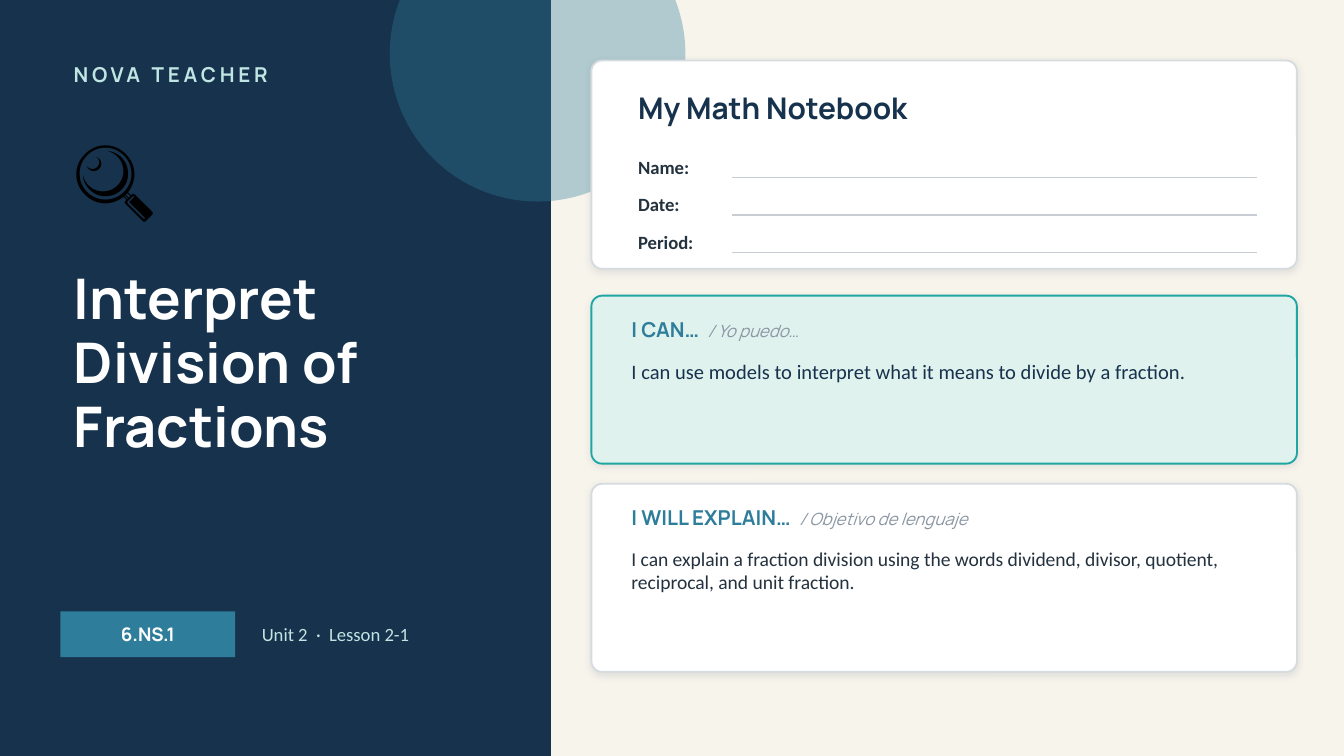
from dataclasses import dataclass

from lxml import etree
from pptx import Presentation
from pptx.dml.color import RGBColor
from pptx.enum.shapes import MSO_CONNECTOR, MSO_SHAPE
from pptx.enum.text import MSO_ANCHOR, MSO_AUTO_SIZE, PP_ALIGN
from pptx.oxml.ns import qn
from pptx.util import Inches, Pt

RECT, OVAL, ROUNDED = MSO_SHAPE.RECTANGLE, MSO_SHAPE.OVAL, MSO_SHAPE.ROUNDED_RECTANGLE
STRAIGHT = MSO_CONNECTOR.STRAIGHT
TOP, MIDDLE = MSO_ANCHOR.TOP, MSO_ANCHOR.MIDDLE
LEFT, CENTER = PP_ALIGN.LEFT, PP_ALIGN.CENTER
NO_FIT = MSO_AUTO_SIZE.NONE


@dataclass(frozen=True)
class Theme:
    cream: str = "F7F4EC"
    navy: str = "17324D"
    blue: str = "2E7D9A"
    teal: str = "1FA6A2"
    mint: str = "DFF2EE"
    pale: str = "BFE6E2"
    white: str = "FFFFFF"
    black: str = "000000"
    ink: str = "24323F"
    grey: str = "8A96A3"
    border: str = "D6DBDF"
    rule: str = "C7CDD2"
    shadow: str = "1C2E42"
    heading: str = "Manrope"
    body: str = "Calibri"
    icon: float = 44
    title: float = 30
    card_title: float = 16
    label: float = 11
    explain: float = 10.5
    small: float = 10
    hint: float = 9


THEME = Theme()
PAGE_WIDTH = 10
PAGE_HEIGHT = PAGE_WIDTH * 9 / 16
CARD_LEFT, CARD_WIDTH = 4.4, 5.25
CARD_RADIUS = 0.08


def style(name, size, color, **extra):
    return {"name": name, "size": Pt(size), "color": color, **extra}


def write(shape, spans, anchor=MIDDLE, align=LEFT, spacing=None):
    frame = shape.text_frame
    settings = {"word_wrap": True, "auto_size": NO_FIT, "vertical_anchor": anchor}
    for key, value in settings.items():
        setattr(frame, key, value)
    para = frame.paragraphs[0]
    para.alignment = align
    if spacing:
        para.line_spacing = spacing
    for text, values in spans:
        span = para.add_run()
        span.text = text
        for key, value in values.items():
            if key == "color":
                span.font.color.rgb = RGBColor.from_string(value)
            elif key == "tracking":
                span._r.get_or_add_rPr().set("spc", str(value * 100))
            else:
                setattr(span.font, key, value)


def add_text(page, place, *spans, anchor=MIDDLE):
    box = page.shapes.add_textbox(*map(Inches, place))
    write(box, spans, anchor)


def add_block(page, kind, place, color, alpha=None):
    shape = page.shapes.add_shape(kind, *map(Inches, place))
    shape.shadow.inherit = False
    shape.fill.solid()
    shape.fill.fore_color.rgb = RGBColor.from_string(color)
    shape.line.fill.background()
    if alpha:
        tint = shape.element.spPr.find(qn("a:solidFill"))[0]
        etree.SubElement(tint, qn("a:alpha"), val=str(alpha * 1000))
    return shape


def add_card(page, top, height, color, outline):
    card = add_block(page, ROUNDED, (CARD_LEFT, top, CARD_WIDTH, height), color)
    card.adjustments[0] = CARD_RADIUS / height
    card.line.color.rgb = RGBColor.from_string(outline)
    card.line.width = Pt(1)
    effects = card.element.spPr.find(qn("a:effectLst"))
    shadow = etree.SubElement(
        effects, qn("a:outerShdw"), blurRad=str(Pt(4)), dist=str(Pt(1)),
        dir="5400000", algn="bl", rotWithShape="0")
    tint = etree.SubElement(shadow, qn("a:srgbClr"), val=THEME.shadow)
    etree.SubElement(tint, qn("a:alpha"), val="10000")


def add_rule(page, left, right, top):
    line = page.shapes.add_connector(STRAIGHT, *map(Inches, (left, top, right, top)))
    line.line.color.rgb = RGBColor.from_string(THEME.rule)
    line.line.width = Pt(0.75)
    etree.SubElement(line.element.spPr, qn("a:effectLst"))


def add_title(page, place, text):
    title = page.shapes.title
    for key, value in zip(("left", "top", "width", "height"), place):
        setattr(title, key, Inches(value))
    title.element.getparent().append(title.element)
    words = style(THEME.heading, THEME.title, THEME.white, bold=True)
    write(title, [(text, words)], TOP, spacing=0.95)


def add_cover(page):
    add_block(page, RECT, (0, 0, 4.1, PAGE_HEIGHT), THEME.navy)
    add_block(page, OVAL, (2.9, -0.7, 2.2, 2.2), THEME.blue, alpha=35)
    add_text(page, (0.45, 0.4, 3.3, 0.3), ("NOVA TEACHER", style(
        THEME.heading, THEME.label, THEME.pale, bold=True, tracking=2)))
    add_text(page, (0.45, 0.85, 1.5, 0.9),
             ("🔍", style(THEME.body, THEME.icon, THEME.black)))
    add_title(page, (0.45, 1.95, 3.3, 1.7), "Interpret Division of Fractions")
    badge = add_block(page, RECT, (0.45, 4.55, 1.3, 0.34), THEME.blue)
    code = style(THEME.heading, THEME.small, THEME.white, bold=True)
    write(badge, [("6.NS.1", code)], align=CENTER)
    add_text(page, (1.85, 4.55, 2.1, 0.34),
             ("Unit 2  ·  Lesson 2-1", style(THEME.body, THEME.small, THEME.pale)))


def add_notebook(page):
    add_card(page, 0.45, 1.55, THEME.white, THEME.border)
    add_text(page, (4.65, 0.6, 4.8, 0.4), ("My Math Notebook", style(
        THEME.heading, THEME.card_title, THEME.navy, bold=True)))
    label = style(THEME.body, THEME.small, THEME.ink, bold=True)
    for row, field in enumerate(("Name:", "Date:", "Period:")):
        top = 1.12 + 0.28 * row
        add_text(page, (4.65, top, 0.8, 0.24), (field, label))
        add_rule(page, 5.45, 9.35, top + 0.2)


def add_goal(page, top, height, colors, heading, hint, text, words):
    left, width = CARD_LEFT + 0.2, CARD_WIDTH - 0.4
    add_card(page, top, height, *colors)
    add_text(page, (left, top + 0.1, width, 0.3),
             (heading, style(THEME.heading, THEME.label, THEME.blue, bold=True)),
             (hint, style(THEME.heading, THEME.hint, THEME.grey, bold=False, italic=True)))
    add_text(page, (left, top + 0.42, width, height - 0.48), (text, words), anchor=TOP)


def main():
    deck = Presentation()
    deck.slide_width, deck.slide_height = Inches(PAGE_WIDTH), Inches(PAGE_HEIGHT)
    page = deck.slides.add_slide(deck.slide_layouts.get_by_name("Title Only"))
    page.background.fill.solid()
    page.background.fill.fore_color.rgb = RGBColor.from_string(THEME.cream)
    add_cover(page)
    add_notebook(page)
    add_goal(page, 2.2, 1.25, (THEME.mint, THEME.teal), "I CAN…  ", "/ Yo puedo…",
             "I can use models to interpret what it means to divide by a fraction.",
             style(THEME.body, THEME.label, THEME.navy))
    add_goal(page, 3.6, 1.4, (THEME.white, THEME.border),
             "I WILL EXPLAIN…  ", "/ Objetivo de lenguaje",
             "I can explain a fraction division using the words dividend, divisor, "
             "quotient, reciprocal, and unit fraction.",
             style(THEME.body, THEME.explain, THEME.ink))
    deck.save("out.pptx")


if __name__ == "__main__":
    main()
